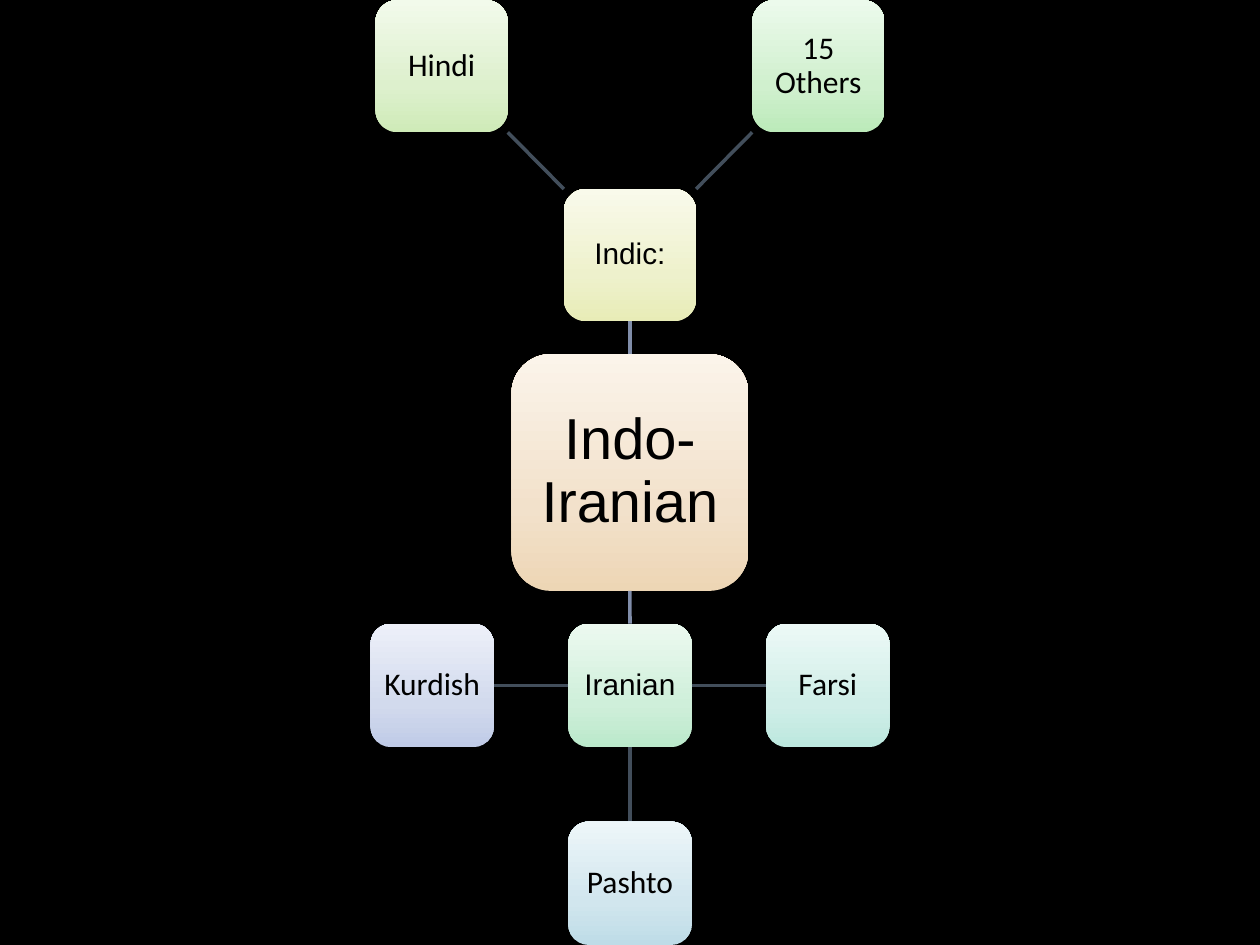
from copy import deepcopy

from lxml import etree
from pptx import Presentation
from pptx.dml.color import RGBColor
from pptx.enum import shapes, text
from pptx.oxml.ns import qn
from pptx.util import Inches, Pt

BLACK = RGBColor(0x00, 0x00, 0x00)
TRUNK = RGBColor(0x80, 0x8D, 0xA9)
TWIG = RGBColor(0x42, 0x4E, 0x5B)


def shades(*codes):
    return [RGBColor.from_string(code) for code in codes]


PEACH = shades("EDD6B5", "F2E1CB", "FBF4EA")
YELLOW = shades("E8ECB7", "EEF1CC", "F9FAEB")
LIME = shades("CFEBB8", "DDF0CD", "F2FAEB")
GREEN = shades("BCEABA", "D0F0CE", "ECFAEC")
MINT = shades("BBE9CB", "CFEFDA", "ECF9F0")
TEAL = shades("BDE8DF", "D0EEE8", "ECF9F6")
SKY = shades("BEDCE7", "D1E6EE", "EDF6F9")
BLUE = shades("C0CBE7", "D2DAED", "EDF0F9")

TOP, LEFT, BOTTOM, RIGHT = range(4)


def fill_gradient(sp, colors):
    sp.fill.gradient()
    sp.fill.gradient_angle = 90
    stop_list = sp._element.spPr.find(qn("a:gradFill")).find(qn("a:gsLst"))
    stop_list.insert(1, deepcopy(stop_list[0]))
    for stop, position, color in zip(sp.fill.gradient_stops, (0, 0.35, 1), colors):
        stop.position = position
        stop.color.rgb = color


def add_node(s, left, top, side, label, colors, font="Calibri", size=18, inset=0.04):
    sp = s.shapes.add_shape(shapes.MSO_SHAPE.ROUNDED_RECTANGLE,
                            Inches(left), Inches(top), Inches(side), Inches(side))
    sp.shadow.inherit = False
    fill_gradient(sp, colors)
    sp.line.fill.background()
    tf = sp.text_frame
    tf.word_wrap = True
    tf.vertical_anchor = text.MSO_ANCHOR.MIDDLE
    tf.margin_left = tf.margin_right = tf.margin_top = tf.margin_bottom = Inches(inset)
    tf.text = label
    p = tf.paragraphs[0]
    p.alignment = text.PP_ALIGN.CENTER
    p.line_spacing = 0.9
    r = p.runs[0]
    r.font.name = font
    r.font.size = Pt(size)
    r.font.color.rgb = BLACK
    return sp


def add_line(s, color, x1=0, y1=0, x2=0, y2=0):
    line = s.shapes.add_connector(shapes.MSO_CONNECTOR.STRAIGHT,
                                  Inches(x1), Inches(y1), Inches(x2), Inches(y2))
    line.line.color.rgb = color
    line.line.width = Pt(2)
    etree.SubElement(line._element.spPr, qn("a:effectLst"))
    return line


def join(s, start, start_side, end, end_side, color):
    line = add_line(s, color)
    line.begin_connect(start, start_side)
    line.end_connect(end, end_side)


def add_indic_branch(s, left, top, width, height):
    side = 1.05
    hub_left = left + (width - side) / 2
    hub_top = top + height - side
    hub = add_node(s, hub_left, hub_top, side, "Indic:", YELLOW, "Arial", 17)
    right = left + width - side
    add_line(s, TWIG, hub_left, hub_top, left + side, top + side)
    add_node(s, left, top, side, "Hindi", LIME)
    add_line(s, TWIG, hub_left + side, hub_top, right, top + side)
    add_node(s, right, top, side, "15 Others", GREEN)
    return hub


def add_iranian_branch(s, left, top, width, height):
    side = 0.98
    center = left + (width - side) / 2
    hub = add_node(s, center, top, side, "Iranian", MINT, "Arial", 17)
    leaves = [
        ("Farsi", TEAL, left + width - side, top, RIGHT, LEFT),
        ("Pashto", SKY, center, top + height - side, BOTTOM, TOP),
        ("Kurdish", BLUE, left, top, LEFT, RIGHT),
    ]
    for label, colors, x, y, hub_side, leaf_side in leaves:
        leaf = add_node(s, x, y, side, label, colors)
        join(s, hub, hub_side, leaf, leaf_side, TWIG)
    return hub


def add_family_tree(s):
    root = add_node(s, 4.06, 2.81, 1.88, "Indo-Iranian", PEACH, "Arial", 33, 0.09)
    indic = add_indic_branch(s, 2.98, 0, 4.04, 2.55)
    iranian = add_iranian_branch(s, 2.94, 4.95, 4.12, 2.55)
    join(s, root, TOP, indic, BOTTOM, TRUNK)
    join(s, root, BOTTOM, iranian, TOP, TRUNK)


def main():
    prs = Presentation()
    prs.slide_width = Inches(10)
    prs.slide_height = Inches(7.5)
    s = prs.slides.add_slide(prs.slide_layouts[6])
    s.background.fill.solid()
    s.background.fill.fore_color.rgb = BLACK
    add_family_tree(s)
    prs.save("out.pptx")


if __name__ == "__main__":
    main()
